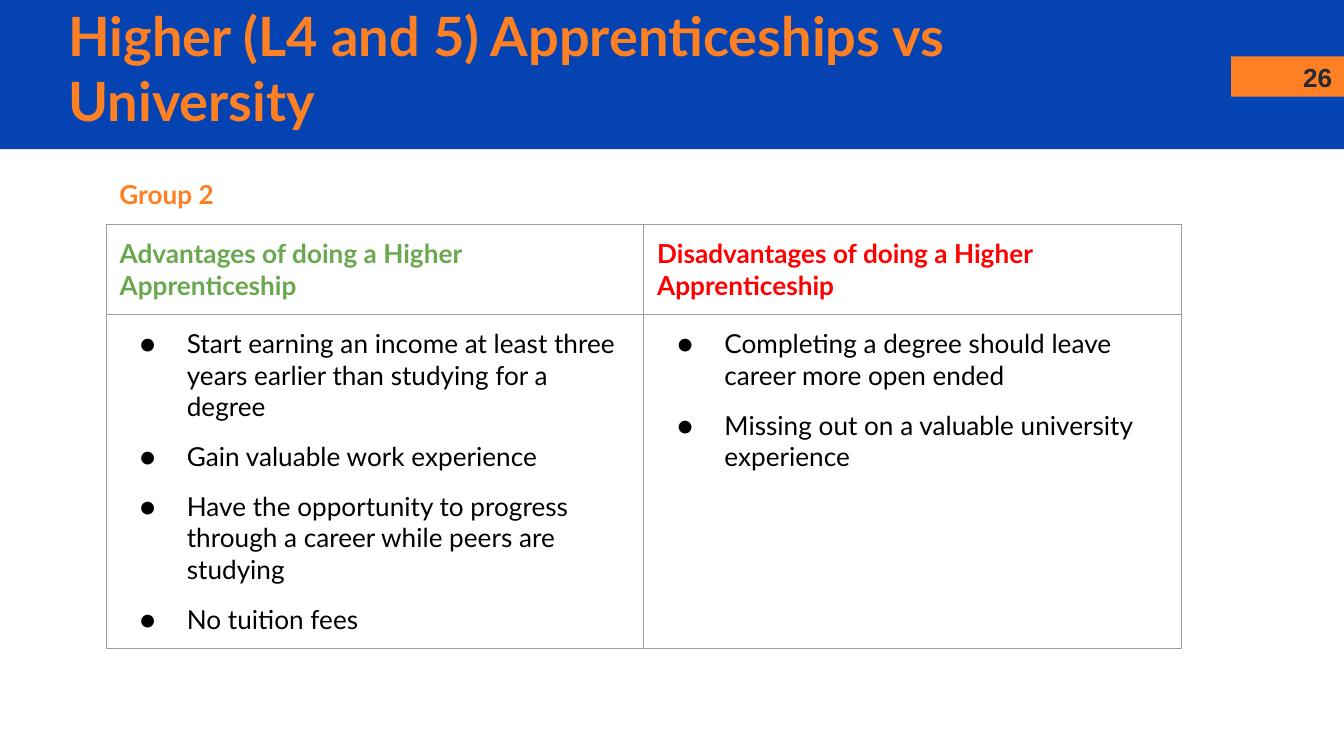
"""Build the slide that weighs higher apprenticeships against university."""
from lxml.etree import SubElement as Sub
from pptx import Presentation
from pptx.dml.color import RGBColor as Rgb
from pptx.enum.shapes import MSO_SHAPE as Kind
from pptx.enum.text import MSO_ANCHOR as Anchor, MSO_AUTO_SIZE as Auto, PP_ALIGN as Align
from pptx.oxml.ns import qn
from pptx.util import Inches, Pt

TITLE = "Higher (L4 and 5) Apprenticeships vs University"
GROUP = "Group 2"
PAGE = "26"
COLS = [
    {
        "head": "Advantages of doing a Higher Apprenticeship",
        "tint": "good",
        "items": [
            "Start earning an income at least three years earlier than studying for a degree",
            "Gain valuable work experience",
            "Have the opportunity to progress through a career while peers are studying",
            "No tuition fees",
        ],
    },
    {
        "head": "Disadvantages of doing a Higher Apprenticeship",
        "tint": "bad",
        "items": [
            "Completing a degree should leave career more open ended",
            "Missing out on a valuable university experience",
        ],
    },
]
THEME = {
    "blue": "0543B3", "orange": "FF8022", "good": "6AA84F", "bad": "FF0000",
    "ink": "000000", "dark": "262A33", "rule": "9E9E9E",
    "font": "Lato", "num": "Arial", "big": 29, "text": 14, "gap": 10, "line": 0.75,
}
PAGE_WIDE = 10
PAGE_HIGH = PAGE_WIDE * 9 / 16
BANDS = [((0, 0, PAGE_WIDE, 1.11), "blue"), ((9.16, 0.42, 0.84, 0.3), "orange")]
LEFT, TOP, WIDE = 0.79, 1.67, 4
ROWS = [0.67, 2.48]
PAD = Inches(0.1)


def box(at):
    return [Inches(n) for n in at]


def tint(name):
    return Rgb.from_string(THEME[name])


def pad(part):
    part.margin_left = part.margin_right = PAD
    part.margin_top = part.margin_bottom = PAD


def dot(para):
    props = para._p.get_or_add_pPr()
    props.set("marL", str(Inches(0.5)))
    props.set("indent", str(Inches(-0.35)))
    shade = Sub(props, qn("a:buClr"))
    Sub(shade, qn("a:srgbClr"), val=THEME["ink"])
    Sub(props, qn("a:buSzPts"), val=str(THEME["text"] * 100))
    Sub(props, qn("a:buFont"), typeface=THEME["font"])
    Sub(props, qn("a:buChar"), char="●")


def write(frame, text, color="ink", size="text", font="font", bold=True,
          align=Align.LEFT, list_=False):
    lines = text if list_ else [text]
    frame.word_wrap = True
    for i, line in enumerate(lines):
        para = frame.paragraphs[0] if i == 0 else frame.add_paragraph()
        if list_:
            dot(para)
        para.alignment = align
        para.space_before = Pt(THEME["gap"] if i else 0)
        run = para.add_run()
        run.text = line
        run.font.name = THEME[font]
        run.font.size = Pt(THEME[size])
        run.font.bold = bold
        run.font.color.rgb = tint(color)


def frame_cell(cell):
    pad(cell)
    cell.vertical_anchor = Anchor.TOP
    cell.fill.background()
    props = cell._tc.get_or_add_tcPr()
    for i, side in enumerate("LRTB"):
        edge = Sub(props, qn(f"a:ln{side}"), w=str(Pt(THEME["line"])))
        fill = Sub(edge, qn("a:solidFill"))
        Sub(fill, qn("a:srgbClr"), val=THEME["rule"])
        props.insert(i, edge)


def label(slide, at, text, **form):
    frame = slide.shapes.add_textbox(*box(at)).text_frame
    pad(frame)
    write(frame, text, **form)


def main():
    deck = Presentation()
    deck.slide_width, deck.slide_height = box((PAGE_WIDE, PAGE_HIGH))
    slide = deck.slides.add_slide(deck.slide_layouts[5])

    for at, color in BANDS:
        band = slide.shapes.add_shape(Kind.RECTANGLE, *box(at))
        band.shadow.inherit = False
        band.fill.solid()
        band.fill.fore_color.rgb = tint(color)
        band.line.fill.background()

    title = slide.shapes.title
    title.left, title.top, title.width, title.height = box((0.41, 0.22, 8.46, 0.56))
    slide.shapes._spTree.append(title._element)
    frame = title.text_frame
    pad(frame)
    frame.auto_size = Auto.NONE
    frame.vertical_anchor = Anchor.MIDDLE
    write(frame, TITLE, color="orange", size="big")

    at = box((LEFT, TOP, WIDE * len(COLS), sum(ROWS)))
    table = slide.shapes.add_table(len(ROWS), len(COLS), *at).table
    table.first_row = table.horz_banding = False
    for row, high in zip(table.rows, ROWS):
        row.height = Inches(high)
    for i, col in enumerate(COLS):
        table.columns[i].width = Inches(WIDE)
        head, body = table.cell(0, i), table.cell(1, i)
        frame_cell(head)
        frame_cell(body)
        write(head.text_frame, col["head"], color=col["tint"])
        write(body.text_frame, col["items"], bold=False, list_=True)

    label(slide, (LEFT, 1.23, 4.47, 0.44), GROUP, color="orange")
    label(slide, (9.49, 0.36, 0.52, 0.25), PAGE, color="dark", font="num", align=Align.RIGHT)
    deck.save("out.pptx")


if __name__ == "__main__":
    main()
